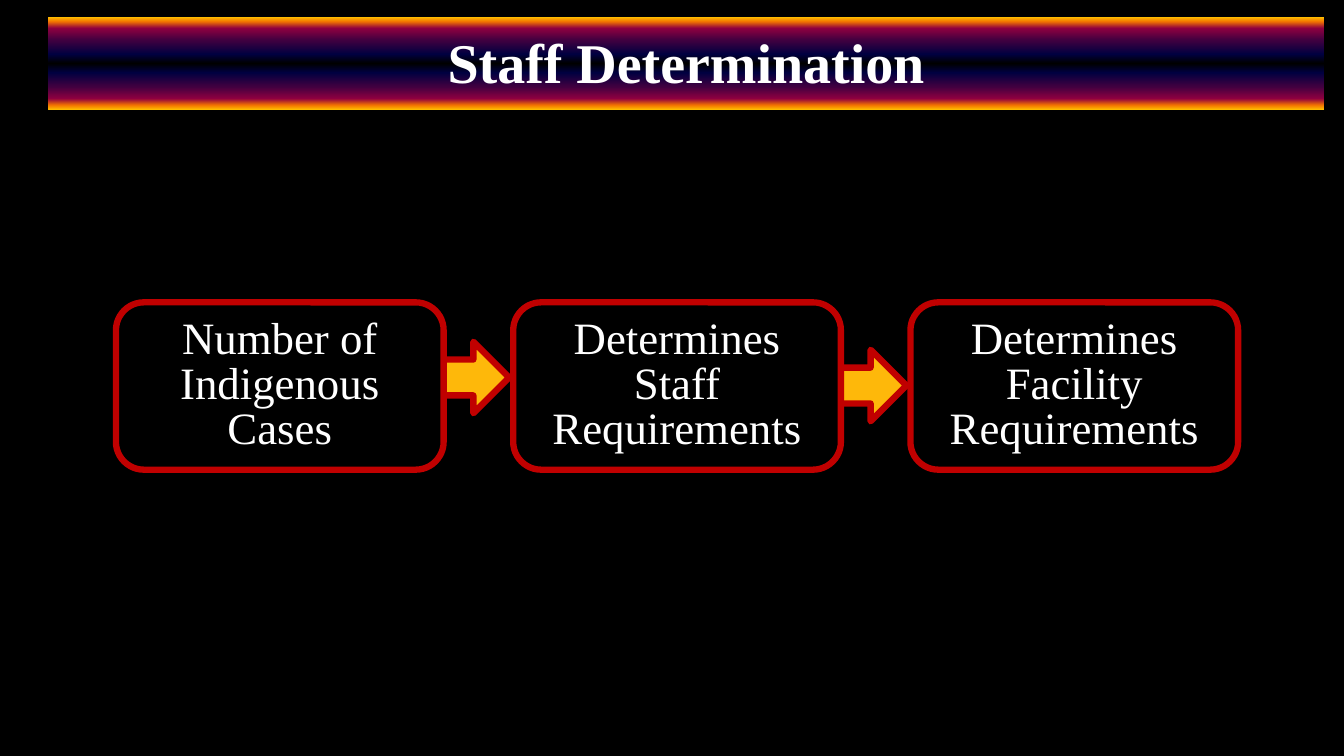
from copy import deepcopy

from pptx import Presentation
from pptx.dml.color import RGBColor
from pptx.enum.shapes import MSO_SHAPE
from pptx.enum.text import MSO_ANCHOR, PP_ALIGN
from pptx.oxml.ns import qn
from pptx.util import Inches, Pt

FONT = "Times New Roman"
BLACK, WHITE, RED, AMBER = "000000", "FFFFFF", "C00000", "FEB80A"
# First half of the banner gradient; the second half mirrors it
BANNER_STOPS = [(0, "FFBF00"), (5, "F27300"), (12, "8F0040"),
                (25, "400040"), (40, "000040"), (50, BLACK)]
STEPS = [["Number of Indigenous Cases"],
         ["Determines Staff Requirements"],
         ["Determines", "Facility Requirements"]]


def color(hex_value):
    return RGBColor.from_string(hex_value)


def add_box(page, kind, left, top, width, height, fill=None, line=None):
    box = page.shapes.add_shape(kind, Inches(left), Inches(top), Inches(width), Inches(height))
    box.shadow.inherit = False
    if fill:
        box.fill.solid()
        box.fill.fore_color.rgb = color(fill)
    if line:
        box.line.color.rgb = color(line)
        box.line.width = Pt(4.5)
    else:
        box.line.fill.background()
    return box


def write_text(box, lines, size, bold=False, spacing=None):
    frame = box.text_frame
    frame.word_wrap = True
    frame.vertical_anchor = MSO_ANCHOR.MIDDLE
    for index, line in enumerate(lines):
        para = frame.add_paragraph() if index else frame.paragraphs[0]
        para.alignment = PP_ALIGN.CENTER
        if spacing:
            para.line_spacing = Pt(spacing)
        span = para.add_run()
        span.text = line
        span.font.name = FONT
        span.font.size = Pt(size)
        span.font.bold = bold
        span.font.color.rgb = color(WHITE)


def fill_gradient(box, stops):
    box.fill.gradient()
    box.fill.gradient_angle = 90
    stop_list = box.fill._fill._gradFill.find(qn("a:gsLst"))
    for _ in stops[2:]:
        stop_list.append(deepcopy(stop_list[0]))
    for stop, (percent, hex_value) in zip(box.fill.gradient_stops, stops):
        stop.position = percent / 100
        stop.color.rgb = color(hex_value)


def add_banner(page, left, top, width, height):
    banner = add_box(page, MSO_SHAPE.RECTANGLE, left, top, width, height)
    mirrored = [(100 - percent, shade) for percent, shade in BANNER_STOPS[-2::-1]]
    fill_gradient(banner, BANNER_STOPS + mirrored)
    banner.text_frame.margin_bottom = Inches(0.1)
    write_text(banner, ["Staff Determination"], size=40, bold=True)


def add_flow(page, left, top, width, height):
    step_width = 3.25
    pitch = (width - step_width) / (len(STEPS) - 1)
    # Arrows lie behind the steps, each a little lower than the one before
    for index in range(len(STEPS) - 1):
        add_box(page, MSO_SHAPE.RIGHT_ARROW, left + 2.99 + index * pitch,
                top + 0.39 + index * 0.08, 0.91, 0.71, AMBER, RED)
    for index, lines in enumerate(STEPS):
        step = add_box(page, MSO_SHAPE.ROUNDED_RECTANGLE, left + index * pitch, top,
                       step_width, height, BLACK, RED)
        write_text(step, lines, size=32, spacing=32)


def main():
    deck = Presentation()
    deck.slide_width, deck.slide_height = Inches(13.33), Inches(7.5)
    page = deck.slides.add_slide(deck.slide_layouts[6])
    page.background.fill.solid()
    page.background.fill.fore_color.rgb = color(BLACK)
    add_banner(page, 0.48, 0.17, 12.65, 0.92)
    add_flow(page, 1.15, 3, 11.13, 1.66)
    deck.save("out.pptx")


if __name__ == "__main__":
    main()
